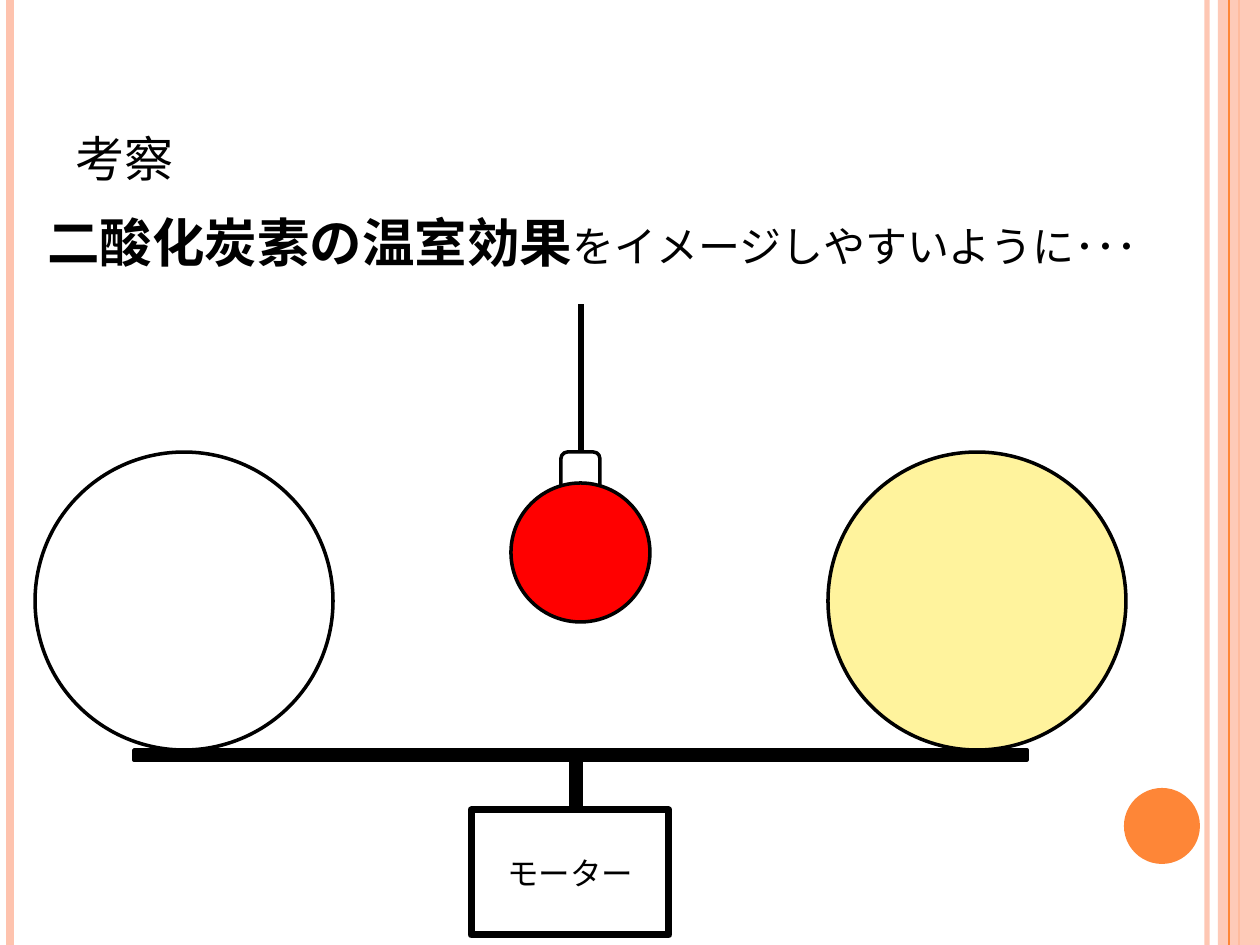
from dataclasses import dataclass
from typing import Optional

from lxml import etree
from pptx import Presentation
from pptx import util as u
from pptx.dml.color import RGBColor
from pptx.enum import shapes, text
from pptx.oxml.ns import qn

EMU_PER_PX = 914400 / 126
W, H = 1260, 945
FONT = "TeX Gyre Schola"
BLACK, WHITE, PINK, ORANGE = "000000", "FFFFFF", "FEC3AE", "FE8637"
RECT = shapes.MSO_SHAPE.RECTANGLE
OVAL = shapes.MSO_SHAPE.OVAL
CAP = shapes.MSO_SHAPE.ROUND_2_SAME_RECTANGLE


@dataclass
class Box:
    """A preset shape; a missing colour means no fill or no outline."""
    kind: int
    x: int
    y: int
    w: int
    h: int
    fill: Optional[str] = None
    line_pt: float = 0
    alpha: int = 100


@dataclass
class Rule:
    """A vertical line."""
    x: int
    y1: int
    y2: int
    color: str
    pt: float
    alpha: int = 100


@dataclass
class Run:
    """A piece of text with its font values."""
    words: str
    size: int
    bold: bool = False


def px(n: int) -> u.Emu:
    """Turn pixels into EMU."""
    return u.Emu(round(n * EMU_PER_PX))


def rgb(color: str) -> RGBColor:
    """Turn a hex string into a colour."""
    return RGBColor.from_string(color)


def set_alpha(sp, alpha: int) -> None:
    """Make the first colour of a shape or line translucent."""
    if alpha < 100:
        clr = next(sp._element.spPr.iter(qn("a:srgbClr")))
        etree.SubElement(clr, qn("a:alpha"), val=str(alpha * 1000))


def add_box(s, b: Box):
    """Draw a preset shape."""
    sp = s.shapes.add_shape(b.kind, px(b.x), px(b.y), px(b.w), px(b.h))
    sp.shadow.inherit = False
    if b.fill:
        sp.fill.solid()
        sp.fill.fore_color.rgb = rgb(b.fill)
    else:
        sp.fill.background()
    if b.line_pt:
        sp.line.color.rgb = rgb(BLACK)
        sp.line.width = u.Pt(b.line_pt)
    else:
        sp.line.fill.background()
    set_alpha(sp, b.alpha)
    return sp


def add_rule(s, rule: Rule) -> None:
    """Draw a vertical line."""
    ln = s.shapes.add_connector(shapes.MSO_CONNECTOR.STRAIGHT, px(rule.x),
                                px(rule.y1), px(rule.x), px(rule.y2))
    ln.line.color.rgb = rgb(rule.color)
    ln.line.width = u.Pt(rule.pt)
    etree.SubElement(ln._element.spPr, qn("a:effectLst"))
    set_alpha(ln, rule.alpha)


def add_runs(tf, runs: list[Run], **frame) -> list:
    """Fill a text frame's first paragraph and return its runs."""
    for name, value in {"word_wrap": True, **frame}.items():
        setattr(tf, name, value)
    made = []
    for run in runs:
        r = tf.paragraphs[0].add_run()
        r.text = run.words
        for name, value in {"name": FONT, "size": u.Pt(run.size),
                            "bold": run.bold}.items():
            setattr(r.font, name, value)
        r.font.color.rgb = rgb(BLACK)
        made.append(r)
    return made


def add_text(s, x: int, y: int, w: int, h: int, runs: list[Run], **frame) -> list:
    """Add a text box and return its runs."""
    tb = s.shapes.add_textbox(px(x), px(y), px(w), px(h))
    return add_runs(tb.text_frame, runs, **frame)


def add_border(s) -> None:
    """Draw the decorated slide edges."""
    add_rule(s, Rule(1207, 0, H, PINK, 3, 93))
    add_rule(s, Rule(10, 0, H, PINK, 4.5))
    add_rule(s, Rule(1239, 0, H, ORANGE, 1.5))
    add_box(s, Box(RECT, 1218, 0, W - 1218, H, PINK, alpha=87))
    add_rule(s, Rule(1229, 0, H, ORANGE, 0.75))
    add_box(s, Box(OVAL, 1124, 788, 76, 76, ORANGE))


def add_model(s) -> None:
    """Draw the motor, the beam, the lamp and the two spheres."""
    add_box(s, Box(RECT, 134, 750, 893, 10, BLACK, 2))
    add_box(s, Box(RECT, 571, 750, 10, 59, BLACK, 2))
    motor = add_box(s, Box(RECT, 471, 810, 198, 125, None, 4))
    add_runs(motor.text_frame, [Run("モーター", 18)],
             vertical_anchor=text.MSO_ANCHOR.MIDDLE)
    motor.text_frame.paragraphs[0].alignment = text.PP_ALIGN.CENTER
    add_box(s, Box(CAP, 561, 452, 39, 39, WHITE, 2))
    add_box(s, Box(OVAL, 511, 483, 139, 139, "FF0000", 2))
    add_rule(s, Rule(581, 452, 304, BLACK, 3))
    for x, fill in ((828, "FFF39D"), (35, WHITE)):
        add_box(s, Box(OVAL, x, 452, 298, 298, fill, 2))


def main() -> None:
    """Build and save the slide."""
    prs = Presentation()
    prs.slide_width, prs.slide_height = px(W), px(H)
    s = prs.slides.add_slide(prs.slide_layouts[6])
    add_border(s)
    title = add_text(s, 63, 38, 1029, 158, [Run("考察", 35)],
                     vertical_anchor=text.MSO_ANCHOR.BOTTOM)
    title[0].font._element.set("cap", "small")
    add_model(s)
    add_text(s, 35, 204, 1171, 77,
             [Run("二酸化炭素の温室効果", 30, True),
              Run("をイメージしやすいように･･･", 24)],
             auto_size=text.MSO_AUTO_SIZE.SHAPE_TO_FIT_TEXT)
    prs.save("out.pptx")


if __name__ == "__main__":
    main()
